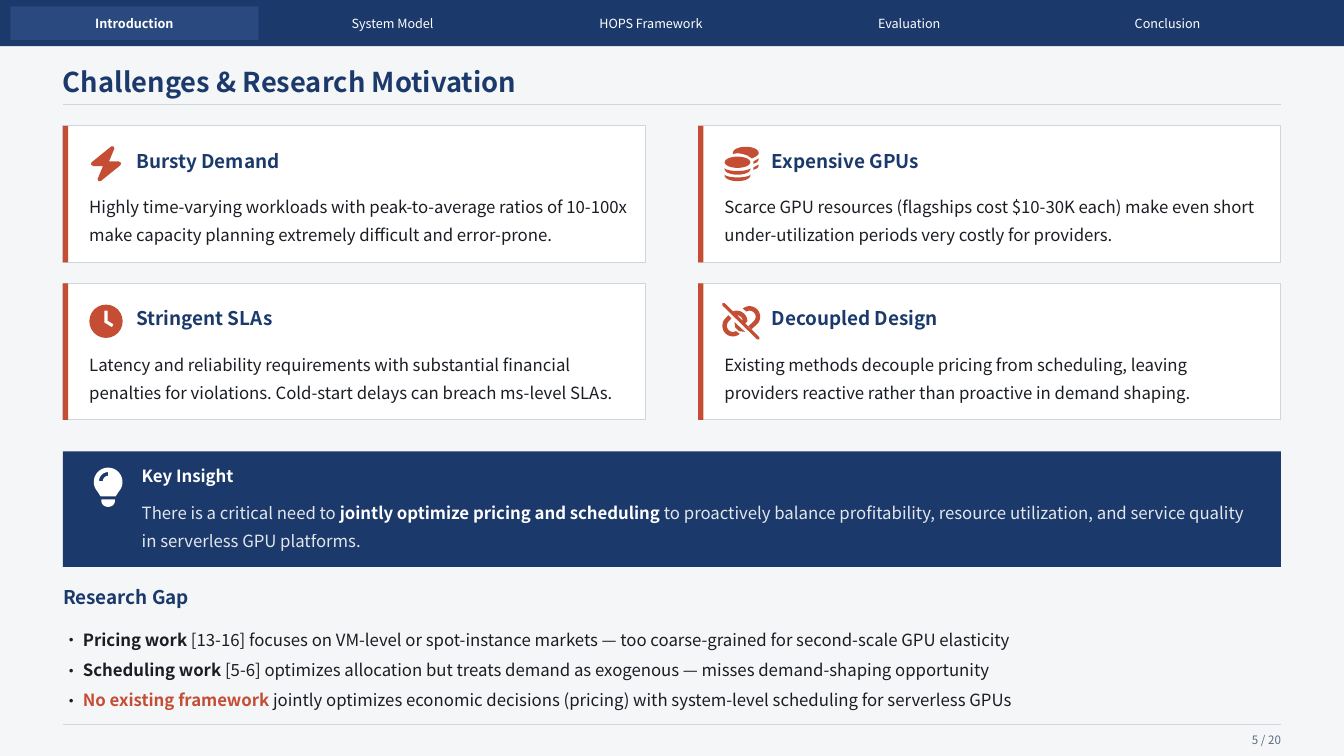
import math

from lxml import etree
from pptx import Presentation
from pptx import util as u
from pptx.dml import color as dml
from pptx.enum import shapes, text
from pptx.oxml import ns

Pt = u.Pt
FONT = "Noto Sans CJK SC"
COLORS = {
    "navy": "1B3A6B", "active": "2A4A7F", "rust": "C44D34", "ink": "1A1D23",
    "rule": "D0D5DD", "muted": "5A6B7F", "white": "FFFFFF", "page": "F5F6F8",
}
NAV_ITEMS = ["Introduction", "System Model", "HOPS Framework", "Evaluation", "Conclusion"]


def rgb(name):
    return dml.RGBColor.from_string(COLORS[name])


def apply_format(target, values):
    for name, value in values.items():
        setattr(target, name, value)


def paint(shape, fill, line=None):
    shape.shadow.inherit = False
    shape.fill.solid()
    shape.fill.fore_color.rgb = rgb(fill)
    if line:
        shape.line.color.rgb = rgb(line)
        shape.line.width = Pt(1)
    else:
        shape.line.fill.background()


def add_box(slide, box, fill, line=None):
    shape = slide.shapes.add_shape(shapes.MSO_SHAPE.RECTANGLE, *map(Pt, box))
    paint(shape, fill, line)


def add_rule(slide, left, top, width):
    connector = slide.shapes.add_connector(
        shapes.MSO_CONNECTOR.STRAIGHT, Pt(left), Pt(top), Pt(left + width), Pt(top))
    connector.line.color.rgb = rgb("rule")
    connector.line.width = Pt(1)
    etree.SubElement(connector._element.spPr, ns.qn("a:effectLst"))


def add_run(paragraph, words, size, color, bold=False, alpha=None):
    run = paragraph.add_run()
    run.text = words
    apply_format(run.font, {"name": FONT, "size": Pt(size), "bold": bold})
    run.font.color.rgb = rgb(color)
    if alpha:
        fill = run._r.rPr.find(ns.qn("a:solidFill"))
        etree.SubElement(fill[0], ns.qn("a:alpha"), val=str(alpha * 1000))


def add_bullet(paragraph, indent):
    properties = paragraph._p.get_or_add_pPr()
    properties.set("marL", str(Pt(indent)))
    properties.set("indent", str(-Pt(indent)))
    bullet_color = etree.SubElement(properties, ns.qn("a:buClr"))
    etree.SubElement(bullet_color, ns.qn("a:srgbClr"), val=COLORS["ink"])
    etree.SubElement(properties, ns.qn("a:buFont"), typeface=FONT)
    etree.SubElement(properties, ns.qn("a:buChar"), char="•")


def add_text(slide, box, paragraphs, size, align="LEFT", anchor="MIDDLE",
             spacing=None, indent=None):
    frame = slide.shapes.add_textbox(*map(Pt, box)).text_frame
    apply_format(frame, {
        "margin_left": 0, "margin_top": 0, "margin_right": 0, "margin_bottom": 0,
        "word_wrap": True, "vertical_anchor": getattr(text.MSO_ANCHOR, anchor),
    })
    for index, runs in enumerate(paragraphs):
        paragraph = frame.add_paragraph() if index else frame.paragraphs[0]
        apply_format(paragraph, {
            "alignment": getattr(text.PP_ALIGN, align), "line_spacing": spacing})
        if indent:
            add_bullet(paragraph, indent)
        for words, *style in runs:
            add_run(paragraph, words, size, *style)


def arc(x, y, radius_x, radius_y, start, end, steps=24):
    angles = [math.radians(start + (end - start) * i / steps) for i in range(steps + 1)]
    return [(x + radius_x * math.cos(a), y + radius_y * math.sin(a)) for a in angles]


def mirror(points):
    return [(-x, -y) for x, y in points]


def bolt_icon():
    half = [(10, -23), (11, -20), (4, -3), (17, -3), (20, -1), (19, 2), (-7, 23)]
    return [half + mirror(half)]


def coins_icon():
    front = [arc(-5, -2, 17, 7.5, 0, 360)]
    for y in (7, 15.5):
        front.append(arc(-5, y, 17, 7.5, 0, 180) + arc(-5, y - 1.5, 17, 4, 180, 0))
    back = [arc(6, -14.5, 17, 8, 180, 360)
            + [(23, -13), (20, -10), (14, -7), (8, -11), (2, -13), (-5, -14), (-11, -13)]]
    for y in (0, 8):
        back.append([(16, y), (16, y - 3), (23, y - 7), (23, y - 5), (21, y - 2)])
    return front + back


def clock_icon():
    hands = [(-2, -14), (2, -14), (2, -1), (10, 4), (8, 8), (-2, 2)]
    return [arc(0, 0, 22, 22, 0, 360), hands]


def unlink_icon():
    def link(outer_end, inner_end):
        return ([outer_end] + arc(11, -6, 14, 14, 45, -130)
                + arc(11, -6, 8, 8, -120, 45) + [inner_end])

    slash = [(-22, -24), (-25, -24), (-25, -21), (21, 24), (24, 24), (24, 21)]
    upper_hook = arc(-6, 0, 14, 14, -112, 0) + [(5, 3), (2, 0)] + arc(-6, 0, 8, 8, 0, -90)
    lower_hook = [(5, 14), (-9, 1), (-8, 8), (-3, 13)]
    return [slash, link((13, 11), (9, 7)), mirror(link((17, 8), (13, 4))),
            upper_hook, lower_hook]


def bulb_icon():
    return [
        arc(0, 0, 19, 19, 137, 403) + [(10, 19), (-10, 19)],
        [(-9, 23), (9, 23)] + arc(0, 25, 9, 8, 0, 180),
        arc(0, -1, 12, 12, 180, 270) + arc(0, -1, 7, 7, 270, 180),
    ]


def add_icon(slide, left, top, contours, color):
    contours = [[(x * 10, y * 10) for x, y in contour] for contour in contours]
    builder = slide.shapes.build_freeform(*contours[0][0], scale=Pt(72) / 1000)
    for index, contour in enumerate(contours):
        if index:
            builder.move_to(*contour[0])
        builder.add_line_segments(contour[1:], close=True)
    paint(builder.convert_to_shape(Pt(left), Pt(top)), color)


def add_navigation(slide, left, top, width, height):
    add_box(slide, (left, top, width, height), "navy")
    pitch, tab_width = 246, 236
    add_box(slide, (left + 10, top + 6, tab_width, height - 12), "active")
    for index, item in enumerate(NAV_ITEMS):
        tab = (left + 10 + index * pitch, top, tab_width, height)
        add_text(slide, tab, [[(item, "white", index == 0)]], 12, "CENTER")


def add_heading(slide, left, top, width, height):
    add_text(slide, (left, top, width, height - 4),
             [[("Challenges & Research Motivation", "navy", True)]], 26)
    add_rule(slide, left, top + height, width)


def add_card(slide, left, top, width, height, icon, title, body):
    add_box(slide, (left, top, width, height), "white", "rule")
    add_box(slide, (left, top, 5, height), "rust")
    add_icon(slide, left + 41, top + 36, icon, "rust")
    add_text(slide, (left + 70, top + 18, 300, 30), [[(title, "navy", True)]], 18)
    add_text(slide, (left + 25, top + 60, width - 40, 55), [[(body, "ink")]], 16,
             anchor="TOP", spacing=1.4)


def add_cards(slide, left, top, width, height):
    cards = [
        (bolt_icon(), "Bursty Demand", "Highly time-varying workloads with peak-to-average ratios of 10-100x make capacity planning extremely difficult and error-prone."),
        (coins_icon(), "Expensive GPUs", "Scarce GPU resources (flagships cost $10-30K each) make even short under-utilization periods very costly for providers."),
        (clock_icon(), "Stringent SLAs", "Latency and reliability requirements with substantial financial penalties for violations. Cold-start delays can breach ms-level SLAs."),
        (unlink_icon(), "Decoupled Design", "Existing methods decouple pricing from scheduling, leaving providers reactive rather than proactive in demand shaping."),
    ]
    gap_x, gap_y = 50, 20
    card_width, card_height = (width - gap_x) / 2, (height - gap_y) / 2
    for index, card in enumerate(cards):
        row, column = divmod(index, 2)
        add_card(slide, left + column * (card_width + gap_x),
                 top + row * (card_height + gap_y), card_width, card_height, *card)


def add_insight(slide, left, top, width, height):
    add_box(slide, (left, top, width, height), "navy")
    add_icon(slide, left + 43, top + 29, bulb_icon(), "white")
    add_text(slide, (left + 75, top + 10, 200, 26), [[("Key Insight", "white", True)]], 16)
    add_text(slide, (left + 75, top + 38, width - 100, 60), [[
        ("There is a critical need to ", "white", False, 87),
        ("jointly optimize pricing and scheduling", "white", True),
        (" to proactively balance profitability, resource utilization, and service quality in serverless GPU platforms.", "white", False, 87),
    ]], 16, spacing=1.4)


def add_gap_list(slide, left, top, width, height):
    items = [
        ("Pricing work", "ink", " [13-16] focuses on VM-level or spot-instance markets — too coarse-grained for second-scale GPU elasticity"),
        ("Scheduling work", "ink", " [5-6] optimizes allocation but treats demand as exogenous — misses demand-shaping opportunity"),
        ("No existing framework", "rust", " jointly optimizes economic decisions (pricing) with system-level scheduling for serverless GPUs"),
    ]
    add_text(slide, (left, top, 300, 28), [[("Research Gap", "navy", True)]], 18)
    add_text(slide, (left, top + 35, width, height - 35),
             [[(lead, color, True), (rest, "ink")] for lead, color, rest in items],
             16, anchor="TOP", spacing=1.5, indent=19)


def add_footer(slide, left, top, width, height):
    add_rule(slide, left, top, width)
    add_text(slide, (left + width - 60, top + 5, 60, height - 5),
             [[("5 / 20", "muted")]], 11, "RIGHT")


def main():
    presentation = Presentation()
    apply_format(presentation, {"slide_width": Pt(1280), "slide_height": Pt(720)})
    slide = presentation.slides.add_slide(presentation.slide_layouts[6])
    slide.background.fill.solid()
    slide.background.fill.fore_color.rgb = rgb("page")
    margin, content_width = 60, 1160
    add_navigation(slide, 0, 0, 1280, 44)
    add_heading(slide, margin, 60, content_width, 40)
    add_cards(slide, margin, 120, content_width, 280)
    add_insight(slide, margin, 430, content_width, 110)
    add_gap_list(slide, margin, 555, content_width, 115)
    add_footer(slide, margin, 690, content_width, 25)
    presentation.save("out.pptx")


if __name__ == "__main__":
    main()
